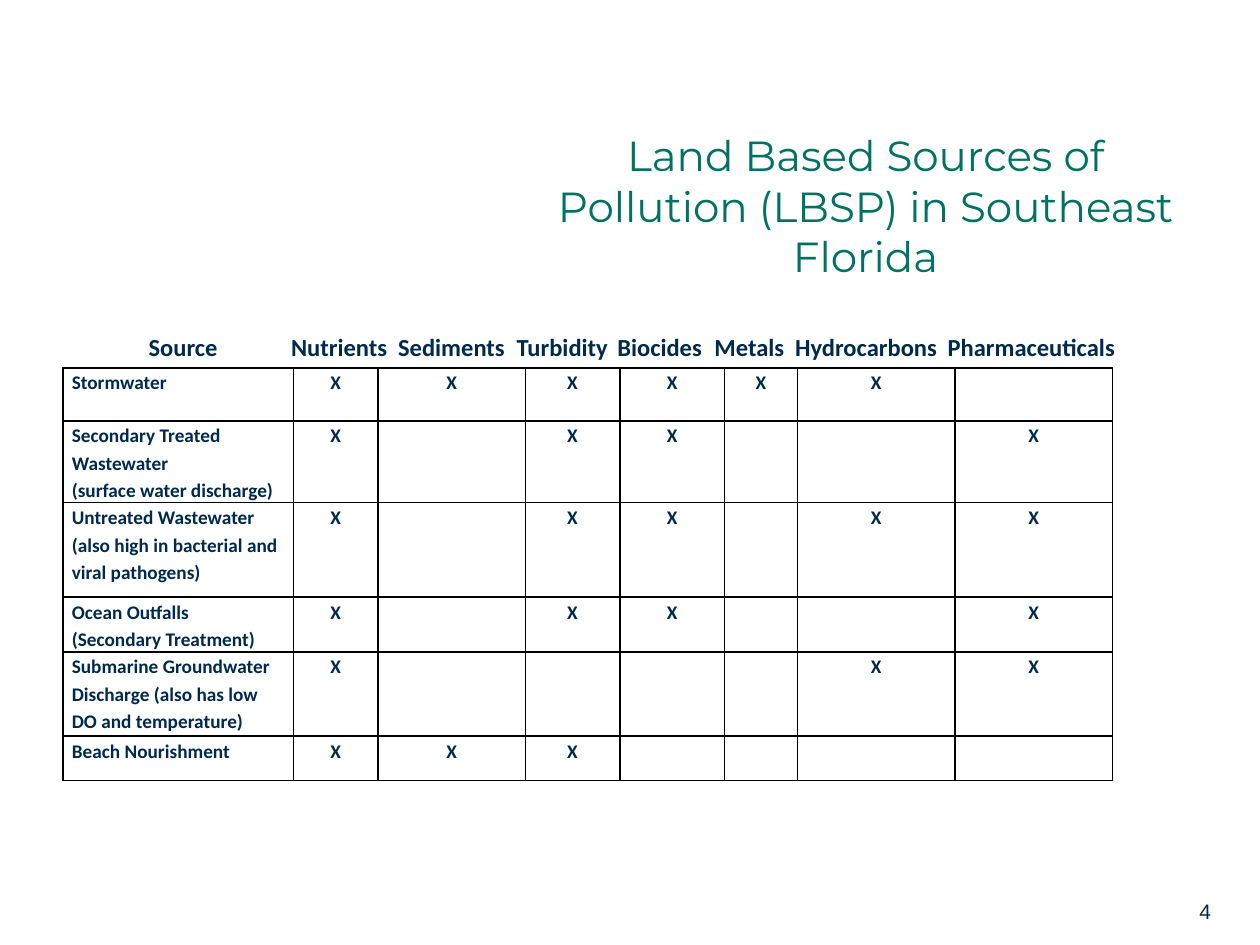
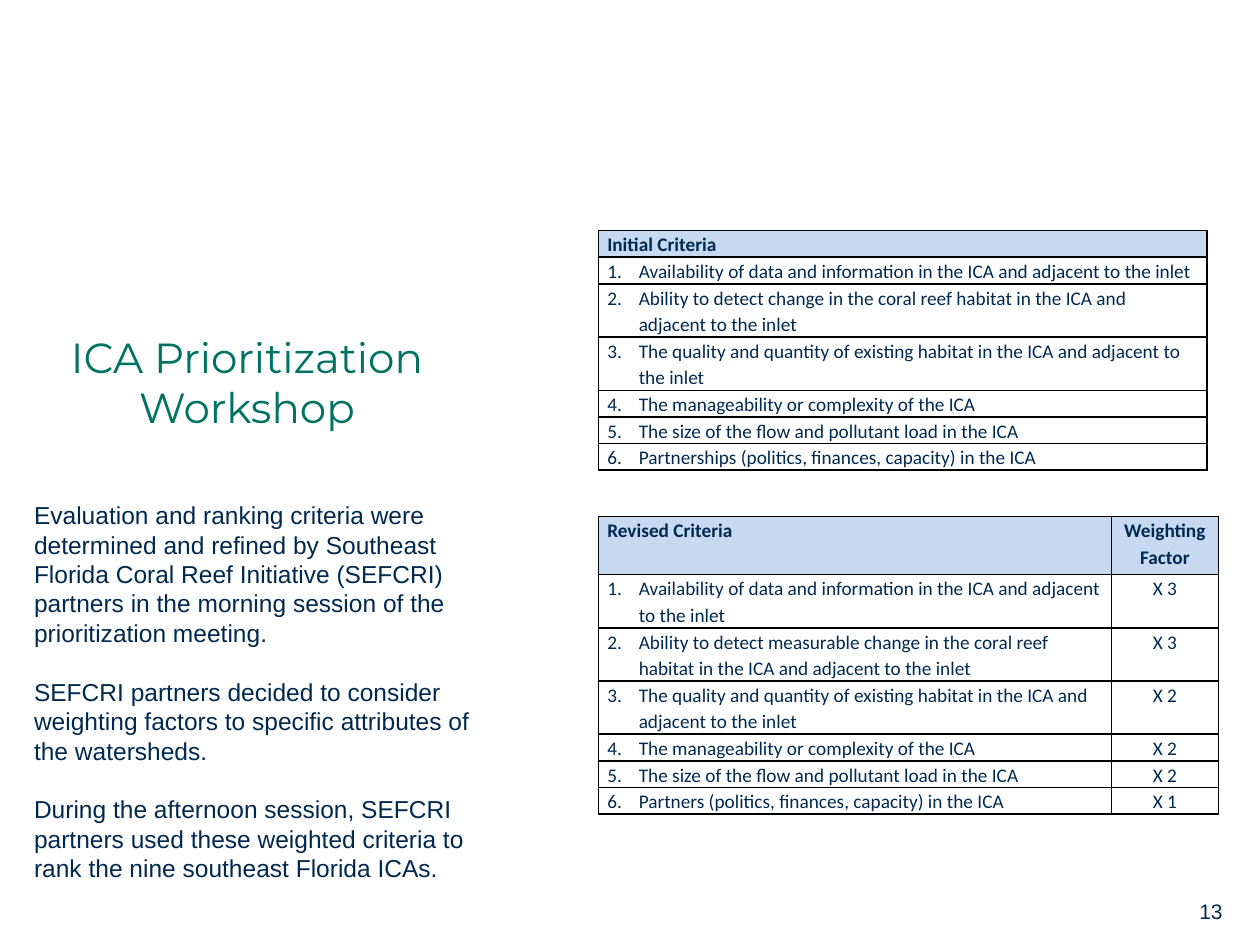
from dataclasses import dataclass

from lxml import etree
from pptx import Presentation
from pptx import util as u
from pptx.dml.color import RGBColor
from pptx.enum import text as t
from pptx.oxml import ns


@dataclass(frozen=True)
class Theme:
    ink: str = "002950"
    title: str = "007262"
    header: str = "C6D9F1"
    border: str = "000000"
    title_font: str = "Montserrat"
    body_font: str = "Arial"
    table_font: str = "Calibri"
    title_size: int = 24
    body_size: int = 14
    table_size: int = 11
    page_size: int = 12
    body_line: float = 16.8
    source_line: float = 1.15
    criteria_line: float = 1.12


THEME = Theme()
CENTER = t.PP_ALIGN.CENTER

SOURCES_TITLE = "Land Based Sources of Pollution (LBSP) in Southeast Florida"
HEADINGS = [("Source", 1.18), ("Nutrients", 2.31), ("Sediments", 3.16), ("Turbidity", 4.1),
            ("Biocides", 4.9), ("Metals", 5.67), ("Hydrocarbons", 6.31),
            ("Pharmaceuticals", 7.52)]
HEADINGS_RIGHT = 9.0
SOURCES = [
    (["Stormwater"], "XXXXXX-"),
    (["Secondary Treated Wastewater", "(surface water discharge)"], "X-XX--X"),
    (["Untreated Wastewater", "(also high in bacterial and viral pathogens)"], "X-XX-XX"),
    (["Ocean Outfalls", "(Secondary Treatment)"], "X-XX--X"),
    (["Submarine Groundwater Discharge (also has low DO and temperature)"], "X----XX"),
    (["Beach Nourishment"], "XXX----"),
]
SOURCE_COLUMNS = [1.83, 0.67, 1.17, 0.75, 0.83, 0.58, 1.25, 1.25]
SOURCE_ROWS = [0.42, 0.65, 0.75, 0.43, 0.67, 0.35]

WORKSHOP_TITLE = "ICA Prioritization Workshop"
WORKSHOP_NOTES = [
    "Evaluation and ranking criteria were determined and refined by Southeast Florida "
    "Coral Reef Initiative (SEFCRI) partners in the morning session of the prioritization meeting.",
    "SEFCRI partners decided to consider weighting factors to specific attributes of the watersheds.",
    "During the afternoon session, SEFCRI partners used these weighted criteria to rank "
    "the nine southeast Florida ICAs.",
]
INITIAL_CRITERIA = [
    "Availability of data and information in the ICA and adjacent to the inlet",
    "Ability to detect change in the coral reef habitat in the ICA and adjacent to the inlet",
    "The quality and quantity of existing habitat in the ICA and adjacent to the inlet",
    "The manageability or complexity of the ICA",
    "The size of the flow and pollutant load in the ICA",
    "Partnerships (politics, finances, capacity) in the ICA",
]
REVISED_CRITERIA = [
    (INITIAL_CRITERIA[0], "X 3"),
    ("Ability to detect measurable change in the coral reef habitat in the ICA "
     "and adjacent to the inlet", "X 3"),
    (INITIAL_CRITERIA[2], "X 2"),
    (INITIAL_CRITERIA[3], "X 2"),
    (INITIAL_CRITERIA[4], "X 2"),
    ("Partners (politics, finances, capacity) in the ICA", "X 1"),
]
ONE_LINE, TWO_LINES = 0.21, 0.42


def write(frame, paragraphs, *, size, font, color=THEME.ink, bold=False, align=None,
          line=None, gap=0, number=None):
    if isinstance(paragraphs, str):
        paragraphs = [paragraphs]
    for i, content in enumerate(paragraphs):
        p = frame.paragraphs[0] if i == 0 else frame.add_paragraph()
        props = p._p.get_or_add_pPr()
        indent = u.Inches(0.25) if number else 0
        props.set("marL", str(indent))
        props.set("indent", str(-indent))
        if number:
            etree.SubElement(props, ns.qn("a:buAutoNum"), type="arabicPeriod", startAt=str(number))
        else:
            etree.SubElement(props, ns.qn("a:buNone"))
        p.alignment = align
        p.line_spacing = line
        p.space_before = u.Pt(gap if i else 0)
        run = p.add_run()
        run.text = content
        run.font.size = u.Pt(size)
        run.font.name = font
        run.font.bold = bold
        run.font.color.rgb = RGBColor.from_string(color)


def place(shape, left, top, width, height, anchor=t.MSO_ANCHOR.TOP):
    shape.left, shape.top, shape.width, shape.height = map(u.Inches, (left, top, width, height))
    frame = shape.text_frame
    frame.auto_size = t.MSO_AUTO_SIZE.NONE
    frame.word_wrap = True
    frame.vertical_anchor = anchor
    return frame


def add_text_box(slide, *box, **options):
    return place(slide.shapes.add_textbox(0, 0, 0, 0), *box, **options)


def start_slide(deck, layout, title, page, title_box, anchor):
    slide = deck.slides.add_slide(deck.slide_layouts[layout])
    write(place(slide.shapes.title, *title_box, anchor=anchor), title, size=THEME.title_size,
          font=THEME.title_font, color=THEME.title, align=CENTER)
    write(add_text_box(slide, 9.42, 7.08, 0.5, 0.3), page,
          size=THEME.page_size, font=THEME.body_font)
    return slide


def outline(cell):
    props = cell._tc.get_or_add_tcPr()
    for side in ("lnL", "lnR", "lnT", "lnB"):
        edge = etree.SubElement(props, ns.qn(f"a:{side}"), w=str(u.Pt(1)))
        fill = etree.SubElement(edge, ns.qn("a:solidFill"))
        etree.SubElement(fill, ns.qn("a:srgbClr"), val=THEME.border)


def add_grid(slide, left, top, columns, heights, rows, *, line, criteria=False):
    table = slide.shapes.add_table(len(heights), len(columns), u.Inches(left), u.Inches(top),
                                   u.Inches(sum(columns)), u.Inches(sum(heights))).table
    table.first_row = table.horz_banding = False
    for column, width in zip(table.columns, columns):
        column.width = u.Inches(width)
    for r, (row, height) in enumerate(zip(rows, heights)):
        table.rows[r].height = u.Inches(height)
        is_header = criteria and r == 0
        for c, content in enumerate(row):
            cell = table.cell(r, c)
            cell.margin_left = cell.margin_right = u.Inches(0.07)
            cell.margin_top = cell.margin_bottom = 0
            outline(cell)
            if is_header:
                cell.fill.solid()
                cell.fill.fore_color.rgb = RGBColor.from_string(THEME.header)
            else:
                cell.fill.background()
            write(cell.text_frame, content, size=THEME.table_size, font=THEME.table_font,
                  bold=is_header or not criteria, align=CENTER if c else None, line=line,
                  number=r if criteria and c == 0 else None)


def build_sources(deck):
    slide = start_slide(deck, 5, SOURCES_TITLE, "4", (4.31, 1.17, 5.12, 0.92),
                        t.MSO_ANCHOR.MIDDLE)
    rows = [[source, *("" if mark == "-" else mark for mark in marks)]
            for source, marks in SOURCES]
    add_grid(slide, 0.5, 2.92, SOURCE_COLUMNS, SOURCE_ROWS, rows, line=THEME.source_line)
    rights = [left for _, left in HEADINGS[1:]] + [HEADINGS_RIGHT]
    for (heading, left), right in zip(HEADINGS, rights):
        frame = add_text_box(slide, left, 2.58, right - left, 0.34, anchor=t.MSO_ANCHOR.MIDDLE)
        frame.margin_left = frame.margin_right = 0
        write(frame, heading, size=THEME.body_size, font=THEME.table_font, bold=True)


def build_workshop(deck):
    slide = start_slide(deck, 1, WORKSHOP_TITLE, "13", (0, 2.58, 3.92, 0.91), t.MSO_ANCHOR.TOP)
    add_grid(slide, 4.75, 1.83, [4.83],
             [ONE_LINE] * 2 + [TWO_LINES] * 2 + [ONE_LINE] * 3,
             [["Initial Criteria"]] + [[criterion] for criterion in INITIAL_CRITERIA],
             line=THEME.criteria_line, criteria=True)
    add_grid(slide, 4.75, 4.1, [4.07, 0.85], [0.46] + [TWO_LINES] * 3 + [ONE_LINE] * 3,
             [("Revised Criteria", "Weighting Factor")] + REVISED_CRITERIA,
             line=THEME.criteria_line, criteria=True)
    write(place(slide.placeholders[1], 0.17, 3.92, 3.83, 3.16), WORKSHOP_NOTES,
          size=THEME.body_size, font=THEME.body_font, line=u.Pt(THEME.body_line),
          gap=THEME.body_line)


def main():
    deck = Presentation()
    deck.slide_width, deck.slide_height = u.Inches(10), u.Inches(7.5)
    build_sources(deck)
    build_workshop(deck)
    deck.save("out.pptx")


if __name__ == "__main__":
    main()
